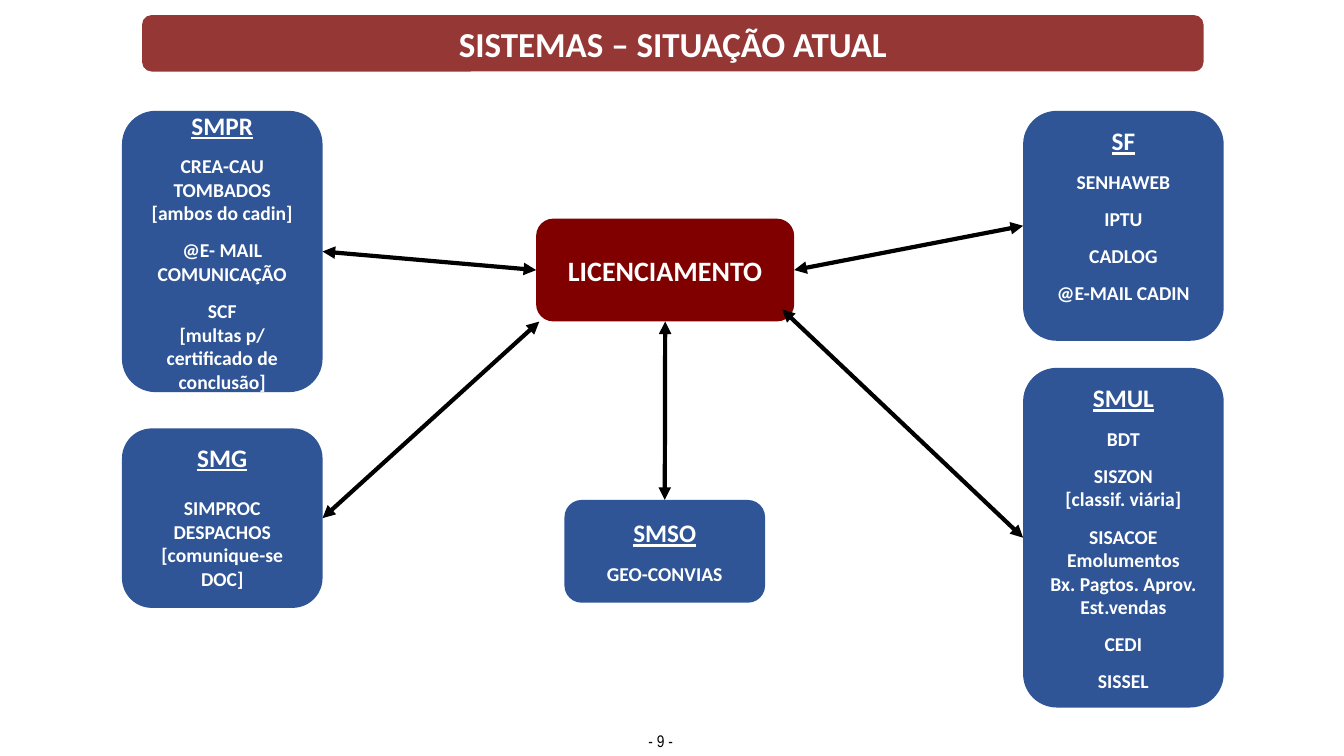
from lxml import etree
from pptx import Presentation
from pptx.dml.color import RGBColor
from pptx.enum.shapes import MSO_CONNECTOR, MSO_SHAPE
from pptx.enum.text import MSO_ANCHOR, PP_ALIGN
from pptx.oxml.ns import qn
from pptx.util import Pt

ROUNDED = MSO_SHAPE.ROUNDED_RECTANGLE
STRAIGHT = MSO_CONNECTOR.STRAIGHT
TOP, MIDDLE = MSO_ANCHOR.TOP, MSO_ANCHOR.MIDDLE
CENTER = PP_ALIGN.CENTER
SIDE_TOP, SIDE_LEFT, SIDE_BOTTOM, SIDE_RIGHT = range(4)

COLORS = {
    "banner": "953735",
    "hub": "800000",
    "system": "2F5597",
    "light": "FFFFFF",
    "dark": "000000",
}
BOX_W = 143.3
LEFT_X, MID_X, RIGHT_X = 87.1, 403.2, 730.8

prs = Presentation()
prs.slide_width, prs.slide_height = Pt(960), Pt(540)
slide = prs.slides.add_slide(prs.slide_layouts[6])


def add_line(tf, text, size, gap=0, font="Calibri", color="light", bold=True, underline=False):
    """Add one centred paragraph, reusing the frame's first one while it is empty."""
    p = tf.paragraphs[0]
    if p.runs:
        p = tf.add_paragraph()
    p.alignment = CENTER
    p.space_before = Pt(gap)
    r = p.add_run()
    r.text = text
    r.font.name, r.font.size = font, Pt(size)
    r.font.bold, r.font.underline = bold, underline
    r.font.color.rgb = RGBColor.from_string(COLORS[color])


def add_box(x, y, w, h, color, anchor):
    sp = slide.shapes.add_shape(ROUNDED, Pt(x), Pt(y), Pt(w), Pt(h))
    sp.shadow.inherit = False
    sp.fill.solid()
    sp.fill.fore_color.rgb = RGBColor.from_string(COLORS[color])
    sp.line.fill.background()
    sp.text_frame.word_wrap = True
    sp.text_frame.vertical_anchor = anchor
    return sp


banner = add_box(101.5, 10.8, 758.2, 40.3, "banner", TOP)
add_line(banner.text_frame, "SISTEMAS – SITUAÇÃO ATUAL", 25)

hub = add_box(383, 156.2, 184.3, 73.4, "hub", MIDDLE)
add_line(hub.text_frame, "LICENCIAMENTO", 20)

# name, left, top, height, anchor, gap between groups, groups of lines
systems = [
    ("SF", RIGHT_X, 79.2, 164.2, TOP, 9.75,
     [["SENHAWEB"], ["IPTU"], ["CADLOG"], ["@E-MAIL CADIN"]]),
    ("SMUL", RIGHT_X, 262.8, 242.6, TOP, 9.75,
     [["BDT"],
      ["SISZON", "[classif. viária]"],
      ["SISACOE", "Emolumentos", "Bx. Pagtos. Aprov. Est.vendas"],
      ["CEDI"],
      ["SISSEL"]]),
    ("SMPR", LEFT_X, 79.2, 200.9, MIDDLE, 9.75,
     [["CREA-CAU", "TOMBADOS", "[ambos do cadin]"],
      ["@E- MAIL COMUNICAÇÃO"],
      ["SCF", "[multas p/ certificado de conclusão]"]]),
    ("SMG", LEFT_X, 306, 128.2, TOP, 17,
     [["SIMPROC DESPACHOS [comunique-se DOC]"]]),
    ("SMSO", MID_X, 357.1, 73.4, MIDDLE, 9.75, [["GEO-CONVIAS"]]),
]
boxes = {}
for name, x, y, h, anchor, gap, groups in systems:
    sp = boxes[name] = add_box(x, y, BOX_W, h, "system", anchor)
    add_line(sp.text_frame, name, 18, underline=True)
    for group in groups:
        for i, text in enumerate(group):
            add_line(sp.text_frame, text, 14, gap=0 if i else gap)

# start is a side of the hub, or a free point near one of its corners
links = [
    (SIDE_LEFT, "SMPR", SIDE_RIGHT),
    ((385.2, 229.7), "SMG", SIDE_RIGHT),
    (SIDE_BOTTOM, "SMSO", SIDE_TOP),
    (SIDE_RIGHT, "SF", SIDE_LEFT),
    ((558.7, 221), "SMUL", SIDE_LEFT),
]
for start, name, side in links:
    free = isinstance(start, tuple)
    x, y = start if free else (0, 0)
    link = slide.shapes.add_connector(STRAIGHT, Pt(x), Pt(y), Pt(x), Pt(y))
    if not free:
        link.begin_connect(hub, start)
    link.end_connect(boxes[name], side)
    link.line.width = Pt(3)
    link.line.color.rgb = RGBColor.from_string(COLORS["dark"])
    ln = link.line._get_or_add_ln()
    for end in ("a:headEnd", "a:tailEnd"):
        etree.SubElement(ln, qn(end), type="triangle")
    etree.SubElement(link._element.spPr, qn("a:effectLst"))

page = slide.shapes.add_textbox(Pt(450), Pt(518.4), Pt(43.9), Pt(28.8))
page.text_frame.word_wrap = True
add_line(page.text_frame, "- 9 -", 12, font="Arial Narrow", color="dark", bold=False)

prs.save("out.pptx")
